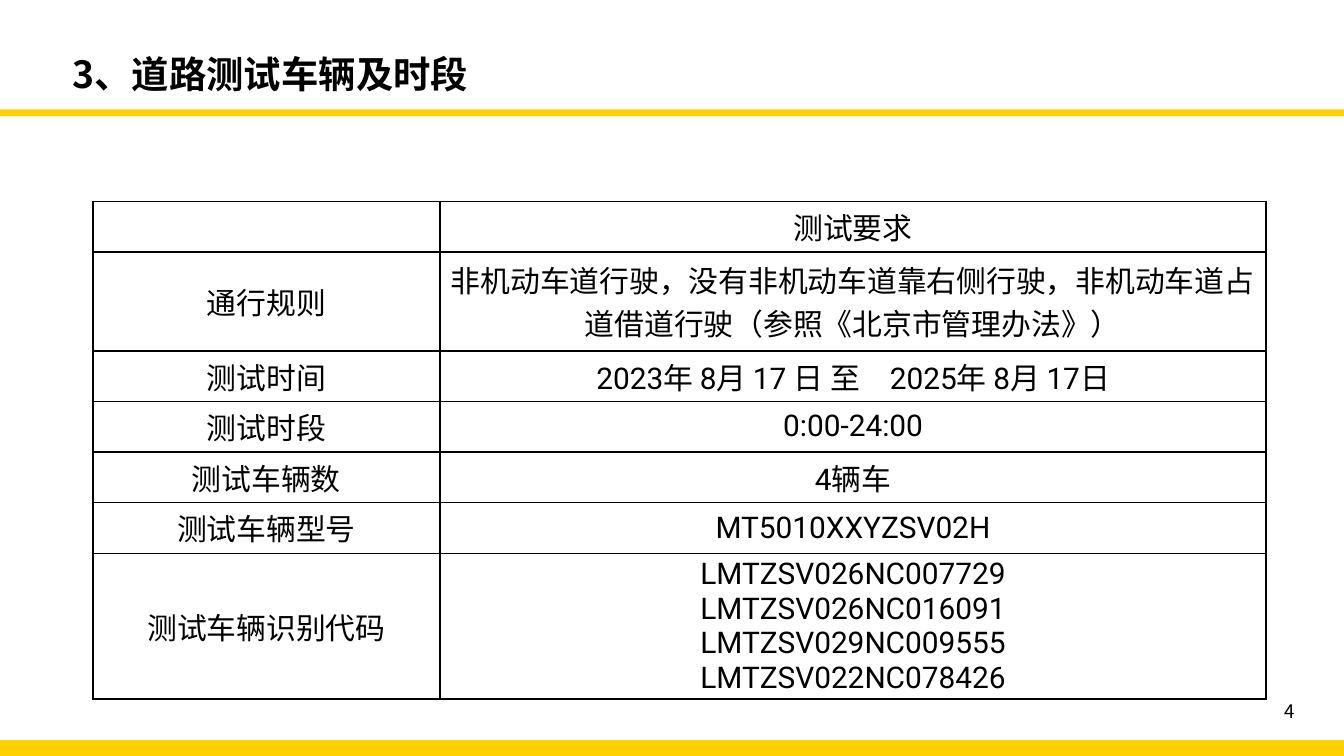
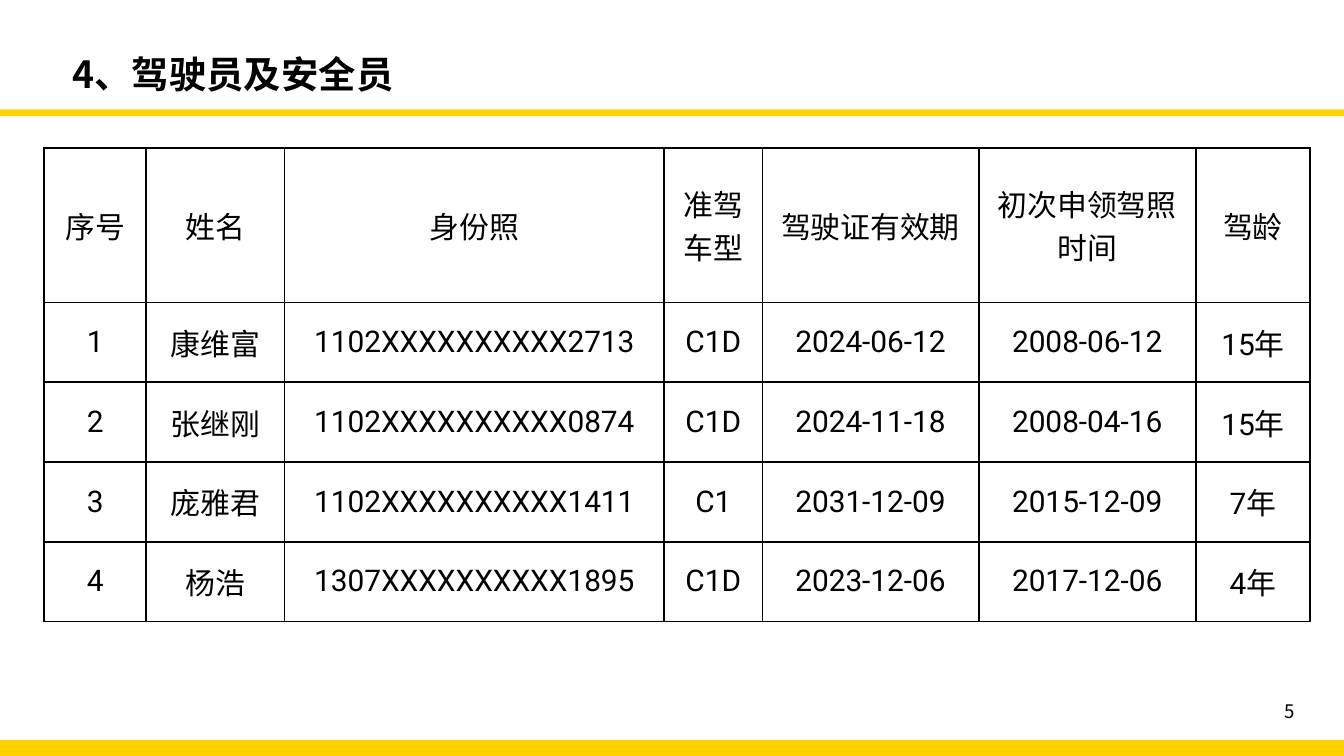
from dataclasses import dataclass

import lxml.etree
import pptx
import pptx.dml.color
import pptx.enum.shapes
import pptx.enum.text
import pptx.oxml.ns
import pptx.presentation
import pptx.slide
import pptx.table
import pptx.text.text
import pptx.util

SLIDE_WIDTH = pptx.util.Inches(10)
SLIDE_HEIGHT = pptx.util.Emu(SLIDE_WIDTH * 9 // 16)
YELLOW, BLACK = "FFD100", "000000"
HEADING_FONT, TABLE_FONT = "Noto Sans CJK SC", "Roboto"
ALIGN = pptx.enum.text.PP_ALIGN
MIDDLE = pptx.enum.text.MSO_ANCHOR.MIDDLE


@dataclass(frozen=True)
class Area:
    """A rectangle in percent of the slide's width and height."""
    left: float
    top: float
    width: float
    height: float

    def box(self) -> tuple[int, int, int, int]:
        return across(self.left), down(self.top), across(self.width), down(self.height)


@dataclass(frozen=True)
class TextStyle:
    font: str
    size: float
    align: ALIGN
    bold: bool = False
    line_spacing: float | None = None


@dataclass(frozen=True)
class TablePage:
    """One slide; column and row sizes are in percent of the slide."""
    title: str
    number: int
    left: float
    top: float
    columns: list[float]
    rows: list[float]
    cells: list[list[str]]


TITLE_RULE = Area(0, 14.45, 100.1, 0.9)
BOTTOM_BAND = Area(0, 97.9, 100, 2.1)
TITLE_AREA = Area(4.4, 6.6, 83.8, 8.4)
NUMBER_AREA = Area(85.5, 91.8, 11.8, 5)

TITLE_STYLE = TextStyle(HEADING_FONT, 20, ALIGN.LEFT, bold=True, line_spacing=0.9)
NUMBER_STYLE = TextStyle(HEADING_FONT, 10, ALIGN.RIGHT, line_spacing=0.9)
CELL_STYLE = TextStyle(TABLE_FONT, 16, ALIGN.CENTER)

VEHICLE_CODES = [
    "LMTZSV026NC007729",
    "LMTZSV026NC016091",
    "LMTZSV029NC009555",
    "LMTZSV022NC078426",
]

PAGES = [
    TablePage(
        title="3、道路测试车辆及时段",
        number=4,
        left=6.9,
        top=26.65,
        columns=[25.85, 61.45],
        rows=[6.7, 13.05] + [6.7] * 5,
        cells=[
            ["", "测试要求"],
            ["通行规则", "非机动车道行驶，没有非机动车道靠右侧行驶，"
                         "非机动车道占道借道行驶（参照《北京市管理办法》）"],
            ["测试时间", "2023年 8月 17 日 至　2025年 8月 17日"],
            ["测试时段", "0:00-24:00"],
            ["测试车辆数", "4辆车"],
            ["测试车辆型号", "MT5010XXYZSV02H"],
            ["测试车辆识别代码", "\n".join(VEHICLE_CODES)],
        ],
    ),
    TablePage(
        title="4、驾驶员及安全员",
        number=5,
        left=3.28,
        top=19.57,
        columns=[7.6, 10.3, 28.25, 7.3, 16.1, 16.15, 8.5],
        rows=[20.45] + [10.55] * 4,
        cells=[
            ["序号", "姓名", "身份照", "准驾车型", "驾驶证有效期", "初次申领驾照时间", "驾龄"],
            ["1", "康维富", "1102XXXXXXXXXX2713", "C1D", "2024-06-12", "2008-06-12", "15年"],
            ["2", "张继刚", "1102XXXXXXXXXX0874", "C1D", "2024-11-18", "2008-04-16", "15年"],
            ["3", "庞雅君", "1102XXXXXXXXXX1411", "C1", "2031-12-09", "2015-12-09", "7年"],
            ["4", "杨浩", "1307XXXXXXXXXX1895", "C1D", "2023-12-06", "2017-12-06", "4年"],
        ],
    ),
]


def across(percent: float) -> int:
    return round(SLIDE_WIDTH * percent / 100)


def down(percent: float) -> int:
    return round(SLIDE_HEIGHT * percent / 100)


def color(hex_code: str) -> pptx.dml.color.RGBColor:
    return pptx.dml.color.RGBColor.from_string(hex_code)


def write(frame: pptx.text.text.TextFrame, content: str, style: TextStyle) -> None:
    frame.text = content
    for paragraph in frame.paragraphs:
        paragraph.alignment = style.align
        if style.line_spacing:
            paragraph.line_spacing = style.line_spacing
        for run in paragraph.runs:
            run.font.name = style.font
            run.font.size = pptx.util.Pt(style.size)
            run.font.bold = style.bold
            run.font.color.rgb = color(BLACK)
            east_asian = lxml.etree.SubElement(run.font._element, pptx.oxml.ns.qn("a:ea"))
            east_asian.set("typeface", HEADING_FONT)


def add_band(slide: pptx.slide.Slide, area: Area) -> None:
    band = slide.shapes.add_shape(pptx.enum.shapes.MSO_SHAPE.RECTANGLE, *area.box())
    band.shadow.inherit = False
    band.fill.solid()
    band.fill.fore_color.rgb = color(YELLOW)
    band.line.fill.background()


def add_text(slide: pptx.slide.Slide, area: Area, content: str,
             style: TextStyle) -> pptx.text.text.TextFrame:
    frame = slide.shapes.add_textbox(*area.box()).text_frame
    frame.word_wrap = True
    write(frame, content, style)
    return frame


def add_borders(cell: pptx.table._Cell) -> None:
    """Rule all four sides; must run before the cell's fill is set."""
    properties = cell._tc.get_or_add_tcPr()
    for side in ("lnL", "lnR", "lnT", "lnB"):
        border = lxml.etree.SubElement(properties, pptx.oxml.ns.qn(f"a:{side}"))
        border.set("w", str(pptx.util.Pt(1)))
        fill = lxml.etree.SubElement(border, pptx.oxml.ns.qn("a:solidFill"))
        lxml.etree.SubElement(fill, pptx.oxml.ns.qn("a:srgbClr")).set("val", BLACK)


def format_cell(cell: pptx.table._Cell, content: str) -> None:
    add_borders(cell)
    cell.fill.background()
    cell.vertical_anchor = MIDDLE
    cell.margin_left = cell.margin_right = pptx.util.Inches(0.06)
    cell.margin_top = cell.margin_bottom = pptx.util.Inches(0.01)
    write(cell.text_frame, content, CELL_STYLE)


def add_grid(slide: pptx.slide.Slide, page: TablePage) -> None:
    area = Area(page.left, page.top, sum(page.columns), sum(page.rows))
    grid = slide.shapes.add_table(len(page.rows), len(page.columns), *area.box()).table
    grid.first_row = grid.horz_banding = False
    for column, width in zip(grid.columns, page.columns):
        column.width = across(width)
    for row, height, contents in zip(grid.rows, page.rows, page.cells):
        row.height = down(height)
        for cell, content in zip(row.cells, contents):
            format_cell(cell, content)


def add_page(deck: pptx.presentation.Presentation, page: TablePage) -> None:
    slide = deck.slides.add_slide(deck.slide_layouts[6])
    add_band(slide, BOTTOM_BAND)
    number = add_text(slide, NUMBER_AREA, str(page.number), NUMBER_STYLE)
    number.word_wrap = False
    number.vertical_anchor = MIDDLE
    add_band(slide, TITLE_RULE)
    add_text(slide, TITLE_AREA, page.title, TITLE_STYLE)
    add_grid(slide, page)


def main() -> None:
    deck = pptx.Presentation()
    deck.slide_width, deck.slide_height = SLIDE_WIDTH, SLIDE_HEIGHT
    for page in PAGES:
        add_page(deck, page)
    deck.save("out.pptx")


if __name__ == "__main__":
    main()
